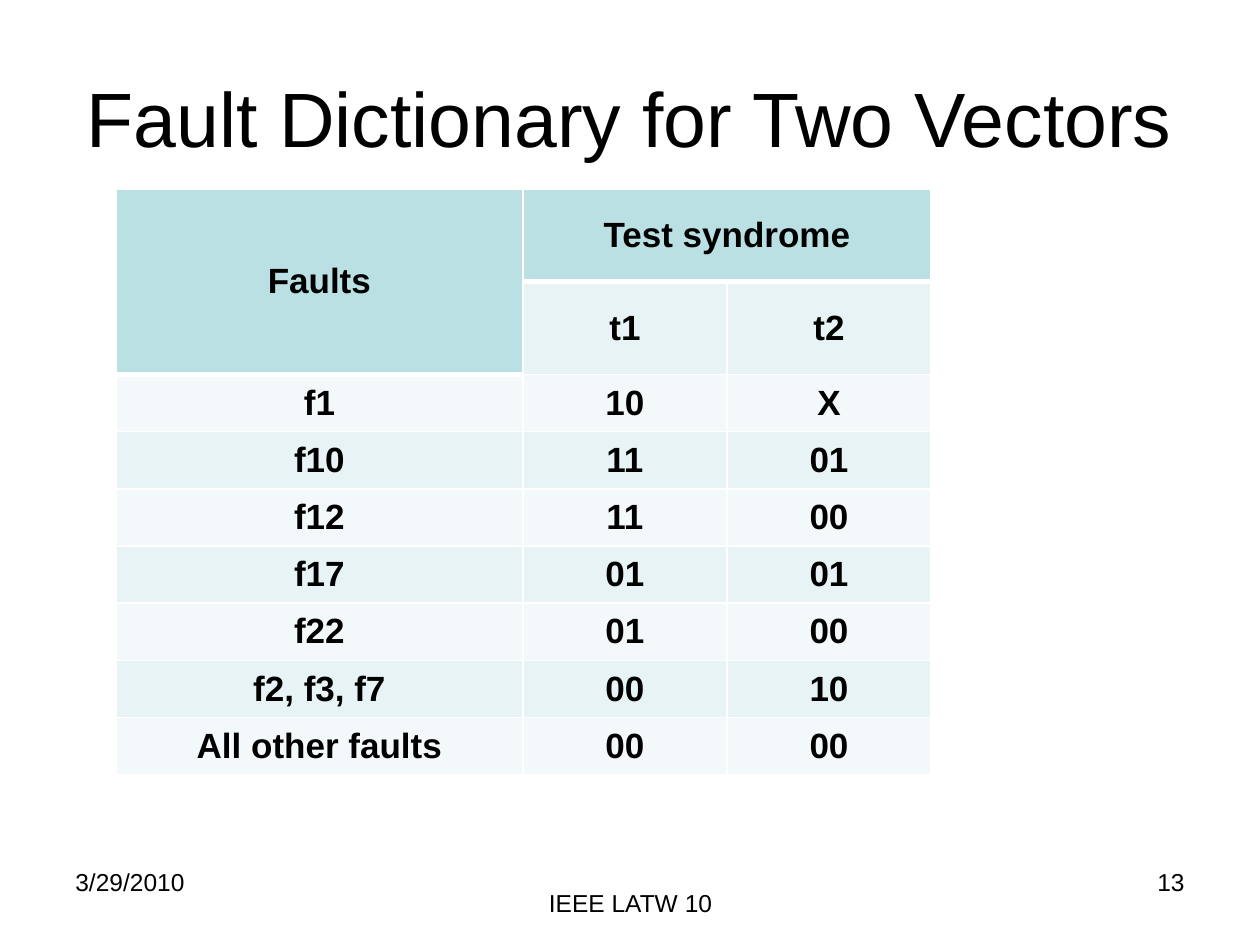
import dataclasses

import lxml.etree
import pptx
import pptx.dml.color
import pptx.enum.text
import pptx.oxml.ns
import pptx.util

Inches = pptx.util.Inches
Pt = pptx.util.Pt
Align = pptx.enum.text.PP_ALIGN
Anchor = pptx.enum.text.MSO_ANCHOR


@dataclasses.dataclass(frozen=True)
class Theme:
    """Hold the colours, type sizes and line widths."""
    face: str = "Arial"
    ink: str = "000000"
    rule: str = "FFFFFF"
    head: str = "BBE0E3"
    bands: tuple = ("F3F9FA", "E7F3F4")
    title: int = 44
    body: int = 20
    foot: int = 14
    thin: int = 1
    thick: int = 3


THEME = Theme()
WIDTHS = (3.23, 1.62, 1.62)
HEIGHTS = (0.73,) * 2 + (0.45,) * 7
MERGES = (((0, 0), (1, 0)), ((0, 1), (0, 2)))
HEADS = {(0, 0), (0, 1), (0, 2), (1, 0)}
ROWS = (
    ("Faults", "Test syndrome", ""),
    ("", "t1", "t2"),
    ("f1", "10", "X"),
    ("f10", "11", "01"),
    ("f12", "11", "00"),
    ("f17", "01", "01"),
    ("f22", "01", "00"),
    ("f2, f3, f7", "00", "10"),
    ("All other faults", "00", "00"),
)
FOOT = (
    ("13", (7.17, 6.83, 2.33, 0.52), Align.RIGHT),
    ("3/29/2010", (0.5, 6.83, 2.33, 0.52), Align.LEFT),
    ("IEEE LATW 10", (3.42, 7, 3.17, 0.25), Align.CENTER),
)


def apply(item, values):
    """Set each named attribute of an item."""
    for name, value in values.items():
        setattr(item, name, value)


def write(frame, text, size, align, bold=False):
    """Put one formatted paragraph in a text frame."""
    para = frame.paragraphs[0]
    para.alignment = align
    run = para.add_run()
    run.text = text
    apply(run.font, {"name": THEME.face, "size": Pt(size), "bold": bold})
    run.font.color.rgb = pptx.dml.color.RGBColor.from_string(THEME.ink)


def edge(cell, side, width):
    """Draw one border of a cell."""
    qn = pptx.oxml.ns.qn
    props = cell._tc.get_or_add_tcPr()
    line = lxml.etree.SubElement(props, qn(f"a:ln{side}"), w=str(Pt(width)))
    fill = lxml.etree.SubElement(line, qn("a:solidFill"))
    lxml.etree.SubElement(fill, qn("a:srgbClr"), val=THEME.rule)


def paint(cell, row, col):
    """Give a cell its borders and fill."""
    head = (row, col) in HEADS
    above = (row - 1, col) in HEADS and not head
    widths = {"L": THEME.thin, "R": THEME.thin,
              "T": THEME.thick if above else THEME.thin,
              "B": THEME.thick if head else THEME.thin}
    for side, width in widths.items():
        edge(cell, side, width)
    tone = THEME.head if head else THEME.bands[row % 2]
    cell.fill.solid()
    cell.fill.fore_color.rgb = pptx.dml.color.RGBColor.from_string(tone)


def add_title(slide, box):
    """Place the slide title."""
    title = slide.shapes.title
    apply(title, dict(zip(("left", "top", "width", "height"),
                          map(Inches, box))))
    apply(title.text_frame, {"word_wrap": True,
                             "vertical_anchor": Anchor.MIDDLE})
    write(title.text_frame, "Fault Dictionary for Two Vectors",
          THEME.title, Align.CENTER)


def add_faults(slide, box):
    """Place the fault dictionary table."""
    table = slide.shapes.add_table(
        len(ROWS), len(WIDTHS), *map(Inches, box)).table
    apply(table, {"first_row": False, "horz_banding": False})
    for col, width in zip(table.columns, WIDTHS):
        col.width = Inches(box[2] * width / sum(WIDTHS))
    for row, height in zip(table.rows, HEIGHTS):
        row.height = Inches(box[3] * height / sum(HEIGHTS))
    for start, end in MERGES:
        table.cell(*start).merge(table.cell(*end))
    for r, texts in enumerate(ROWS):
        for c, text in enumerate(texts):
            cell = table.cell(r, c)
            paint(cell, r, c)
            cell.vertical_anchor = Anchor.MIDDLE
            if text:
                write(cell.text_frame, text, THEME.body, Align.CENTER, True)


def add_note(slide, box, text, align):
    """Place one footer text."""
    frame = slide.shapes.add_textbox(*map(Inches, box)).text_frame
    apply(frame, {"word_wrap": True, "vertical_anchor": Anchor.TOP})
    write(frame, text, THEME.foot, align)


def main():
    """Build and save the slide."""
    deck = pptx.Presentation()
    apply(deck, {"slide_width": Inches(10), "slide_height": Inches(7.5)})
    slide = deck.slides.add_slide(deck.slide_layouts[5])
    add_title(slide, (0.5, 0.3, 9, 1.25))
    add_faults(slide, (0.92, 1.5, 6.47, 4.65))
    for text, box, align in FOOT:
        add_note(slide, box, text, align)
    deck.save("out.pptx")


if __name__ == "__main__":
    main()
